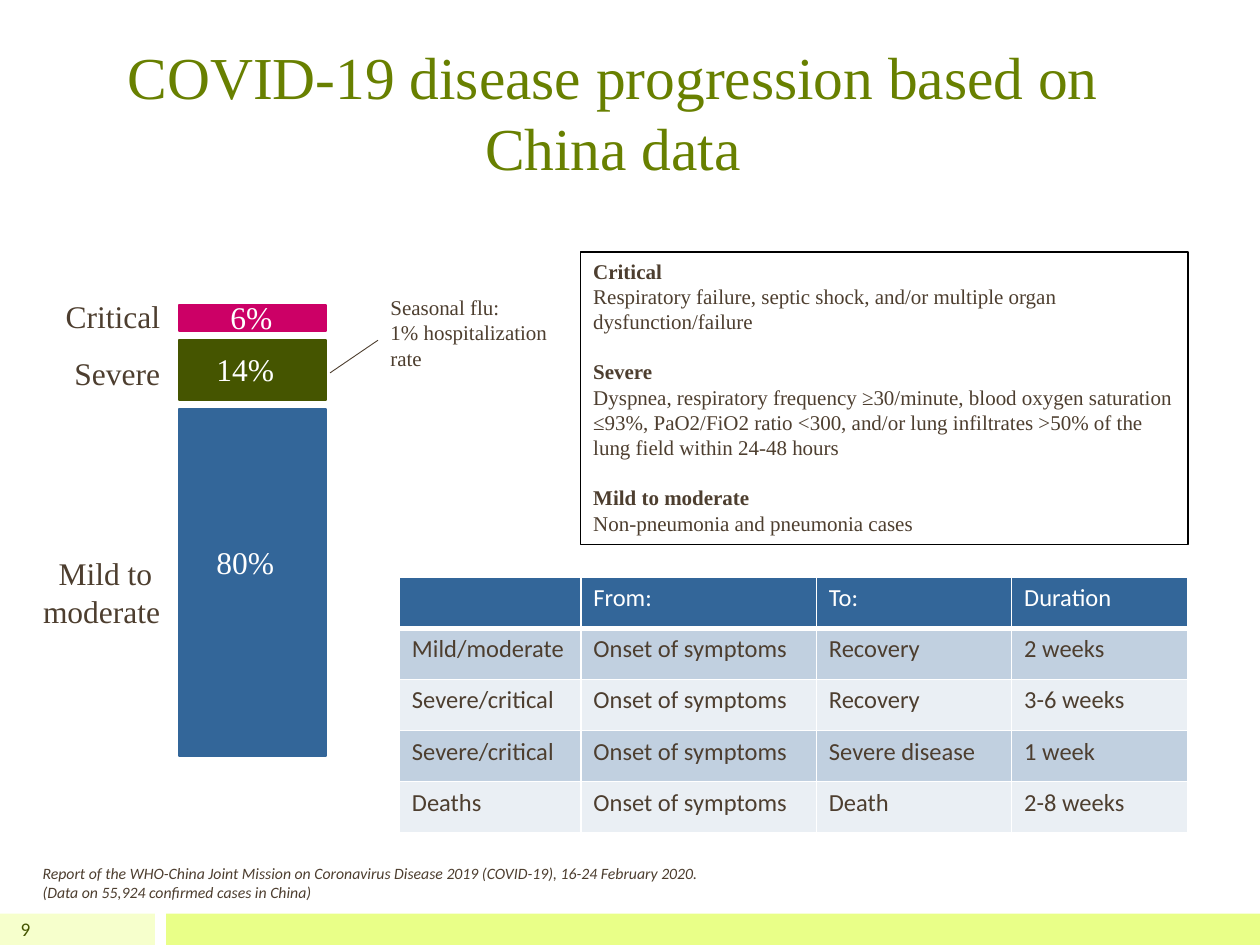
from lxml import etree
from pptx import Presentation
from pptx.dml.color import RGBColor
from pptx.enum.shapes import MSO_CONNECTOR, MSO_SHAPE
from pptx.enum.text import MSO_ANCHOR, PP_ALIGN
from pptx.oxml.ns import qn
from pptx.util import Pt

RECTANGLE = MSO_SHAPE.RECTANGLE
STRAIGHT = MSO_CONNECTOR.STRAIGHT
TOP, MIDDLE, BOTTOM = MSO_ANCHOR.TOP, MSO_ANCHOR.MIDDLE, MSO_ANCHOR.BOTTOM
LEFT, CENTER, RIGHT = PP_ALIGN.LEFT, PP_ALIGN.CENTER, PP_ALIGN.RIGHT

SERIF, SANS = "Times New Roman", "Calibri"
BROWN, WHITE, BLUE, OLIVE, PINK = "4D3E2F", "FFFFFF", "336699", "455500", "CC0066"

BAR_LEFT, BAR_TOP, BAR_WIDTH, BAR_GAP = 102.2, 174.2, 84.2, 5.1
POINTS_PER_PERCENT = 2.475
LABEL_RIGHT = 98.6

SEVERITIES = [
    (6, "6%", PINK, CENTER, 167, "Critical", 166.3, 74.9, 28.8),
    (14, "14%", OLIVE, LEFT, 196.6, "Severe", 198.7, 74.9, 28.8),
    (80, "80%", BLUE, LEFT, 306.7, "Mild to \nmoderate", 313.2, 92.9, 51.1),
]

DEFINITIONS = [
    ("Critical", "Respiratory failure, septic shock, and/or multiple organ dysfunction/failure"),
    ("Severe", "Dyspnea, respiratory frequency ≥30/minute, blood oxygen saturation ≤93%, "
               "PaO2/FiO2 ratio <300, and/or lung infiltrates >50% of the lung field "
               "within 24-48 hours"),
    ("Mild to moderate", "Non-pneumonia and pneumonia cases"),
]

DURATIONS = [
    ("", "From:", "To:", "Duration"),
    ("Mild/moderate", "Onset of symptoms", "Recovery", "2 weeks"),
    ("Severe/critical", "Onset of symptoms", "Recovery", "3-6 weeks"),
    ("Severe/critical", "Onset of symptoms", "Severe disease", "1 week"),
    ("Deaths", "Onset of symptoms", "Death", "2-8 weeks"),
]
COLUMN_WIDTHS = [103.7, 134.6, 111.6, 100.8]
ROW_HEIGHT = 29.2


def rgb(color):
    return RGBColor.from_string(color)


def format_text(text_frame, size, color, font=SERIF, align=LEFT, italic=False):
    for paragraph in text_frame.paragraphs:
        paragraph.alignment = align
        for run in paragraph.runs:
            run.font.size = Pt(size)
            run.font.name = font
            run.font.italic = italic
            run.font.color.rgb = rgb(color)


def add_text(slide, text, left, top, width, height, size, color=BROWN,
             anchor=TOP, **style):
    shape = slide.shapes.add_textbox(Pt(left), Pt(top), Pt(width), Pt(height))
    text_frame = shape.text_frame
    text_frame.word_wrap = True
    text_frame.vertical_anchor = anchor
    text_frame.text = text
    format_text(text_frame, size, color, **style)


def add_rectangle(slide, left, top, width, height, fill=None, line=None, line_width=1):
    shape = slide.shapes.add_shape(RECTANGLE, Pt(left), Pt(top), Pt(width), Pt(height))
    shape.shadow.inherit = False
    if fill:
        shape.fill.solid()
        shape.fill.fore_color.rgb = rgb(fill)
    else:
        shape.fill.background()
    if line:
        shape.line.color.rgb = rgb(line)
        shape.line.width = Pt(line_width)
    else:
        shape.line.fill.background()
    return shape


def add_severity_bar(slide):
    top = BAR_TOP
    for percent, value, color, align, value_top, label, label_top, width, height in SEVERITIES:
        bar_height = percent * POINTS_PER_PERCENT
        add_rectangle(slide, BAR_LEFT, top, BAR_WIDTH, bar_height, color, color)
        add_text(slide, value, 116.6, value_top, 54, 28.8, 18, WHITE, align=align)
        add_text(slide, label, LABEL_RIGHT - width, label_top, width, height, 18, align=RIGHT)
        top += bar_height + BAR_GAP


def add_flu_note(slide):
    add_text(slide, "Seasonal flu:\n1% hospitalization rate", 216, 164.9, 115.9, 51.1, 12)
    connector = slide.shapes.add_connector(STRAIGHT, Pt(188.6), Pt(213.1), Pt(216), Pt(194.4))
    connector.line.color.rgb = rgb(BROWN)
    connector.line.width = Pt(0.5)
    etree.SubElement(connector._element.spPr, qn("a:effectLst"))


def add_definitions(slide):
    shape = add_rectangle(slide, 331.9, 144, 347, 167, line="000000", line_width=0.75)
    text_frame = shape.text_frame
    text_frame.word_wrap = True
    text_frame.vertical_anchor = TOP
    text_frame.text = "\n".join(line for pair in DEFINITIONS for line in pair)
    format_text(text_frame, 12, BROWN)
    headings = text_frame.paragraphs[::2]
    for heading in headings:
        heading.runs[0].font.bold = True
    for heading in headings[1:]:
        heading.space_before = Pt(14.4)


def add_cell_borders(cell, bottom_width):
    properties = cell._tc.get_or_add_tcPr()
    for side, width in (("L", 1), ("R", 1), ("T", 1), ("B", bottom_width)):
        border = etree.SubElement(properties, qn("a:ln" + side), w=str(Pt(width)))
        fill = etree.SubElement(border, qn("a:solidFill"))
        etree.SubElement(fill, qn("a:srgbClr"), val=WHITE)


def fill_cell(cell, color, opacity):
    cell.fill.solid()
    cell.fill.fore_color.rgb = rgb(color)
    if opacity < 100:
        color_element = cell._tc.tcPr.find(qn("a:solidFill")).find(qn("a:srgbClr"))
        etree.SubElement(color_element, qn("a:alpha"), val=str(opacity * 1000))


def add_duration_table(slide):
    table = slide.shapes.add_table(
        len(DURATIONS), len(COLUMN_WIDTHS), Pt(228.2), Pt(329.8),
        Pt(sum(COLUMN_WIDTHS)), Pt(ROW_HEIGHT * len(DURATIONS))).table
    for column, width in zip(table.columns, COLUMN_WIDTHS):
        column.width = Pt(width)
    for row_index, texts in enumerate(DURATIONS):
        header = row_index == 0
        opacity = 100 if header else 30 if row_index % 2 else 10
        table.rows[row_index].height = Pt(ROW_HEIGHT)
        for column_index, text in enumerate(texts):
            cell = table.cell(row_index, column_index)
            cell.text_frame.text = text
            format_text(cell.text_frame, 14, WHITE if header else BROWN, SANS)
            for run in cell.text_frame.paragraphs[0].runs:
                run.font.bold = False
            add_cell_borders(cell, 3 if header else 1)
            fill_cell(cell, BLUE, opacity)


def add_footer(slide):
    add_rectangle(slide, 0, 522, 88.6, 18, "F6FFCC")
    add_rectangle(slide, 95, 522, 625, 18, "E9FF88")
    add_text(slide, "9", 0, 522, 24.5, 18, 11, OLIVE, MIDDLE, font=SANS, align=RIGHT)
    add_text(slide, "Report of the WHO-China Joint Mission on Coronavirus Disease 2019 "
                    "(COVID-19), 16-24 February 2020.\n"
                    "(Data on 55,924 confirmed cases in China)",
             17.3, 490.3, 643, 28.8, 9, font=SANS, italic=True)


def main():
    presentation = Presentation()
    presentation.slide_width = Pt(720)
    presentation.slide_height = Pt(540)
    slide = presentation.slides.add_slide(presentation.slide_layouts[6])
    add_text(slide, "COVID-19 disease progression based on China data",
             40.3, 15.1, 619.9, 92.9, 34, "688000", BOTTOM, align=CENTER)
    add_severity_bar(slide)
    add_definitions(slide)
    add_duration_table(slide)
    add_flu_note(slide)
    add_footer(slide)
    presentation.save("out.pptx")


if __name__ == "__main__":
    main()
